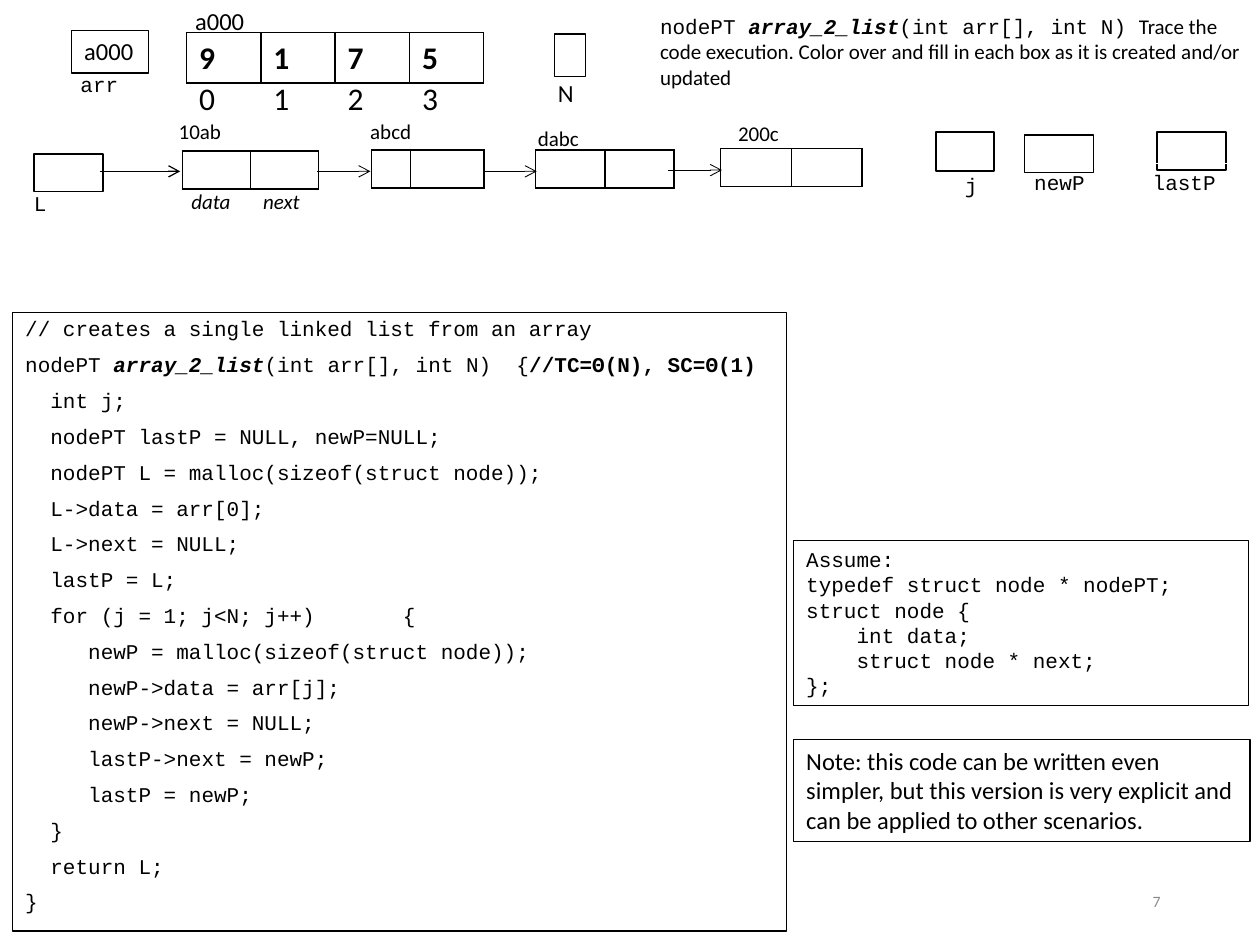
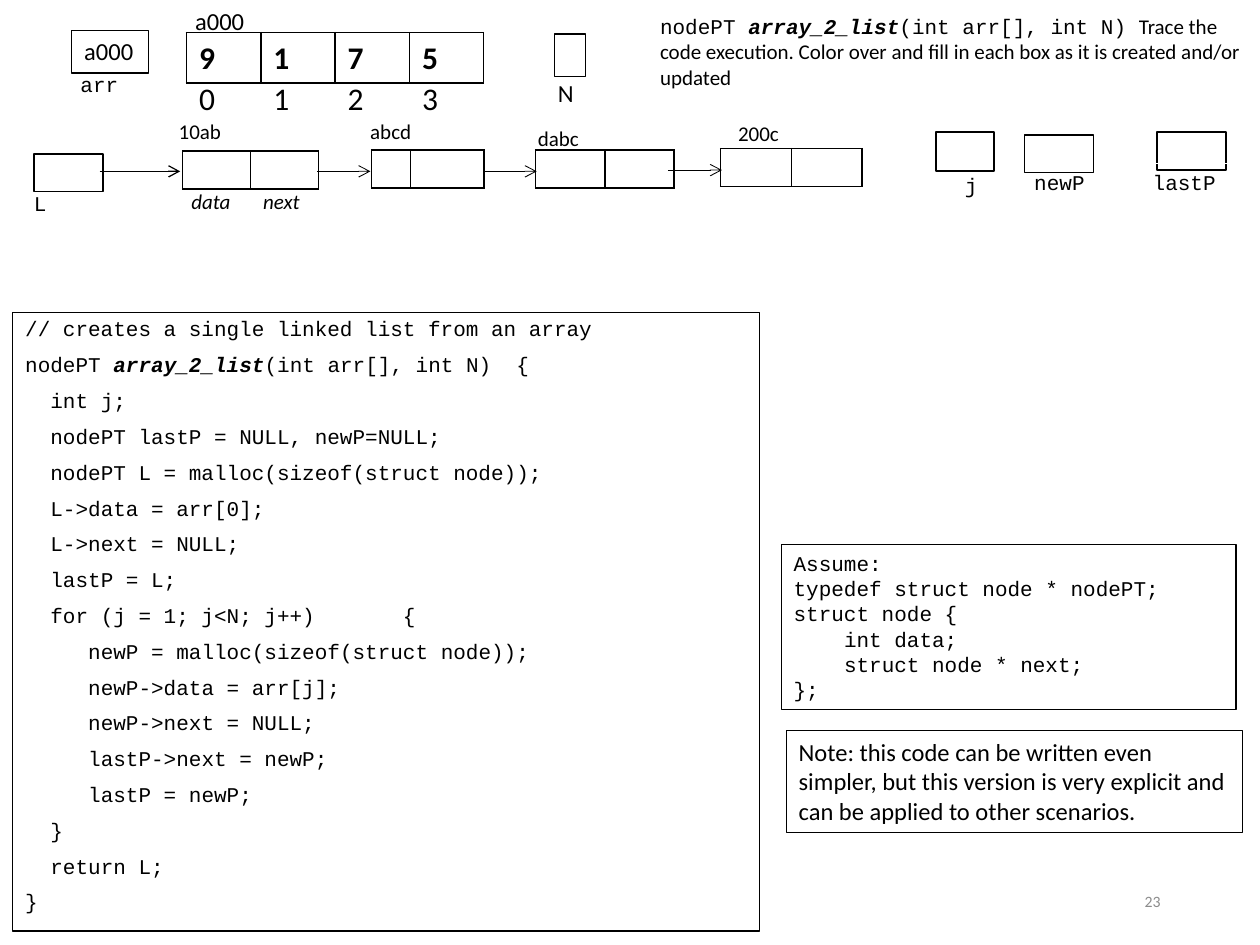
"""Build two slides that trace turning an array into a linked list."""
from lxml.etree import SubElement
from pptx import Presentation
from pptx.dml.color import RGBColor
from pptx.enum.shapes import MSO_CONNECTOR as Link, MSO_SHAPE as Shape
from pptx.enum.text import MSO_ANCHOR as Anchor, MSO_AUTO_SIZE as Fit, PP_ALIGN as Align
from pptx.oxml.ns import qn
from pptx.util import Inches, Pt

BLACK, WHITE, GRAY = "000000", "FFFFFF", "8C8C8C"
SANS, MONO = "Calibri", "Courier New"
CHAR = 0.1
NAME = ("array_2_list", "bi")
CODE = [
    (0, ["// creates a single linked list from an array"]),
    (0, ["nodePT ", NAME, "(int arr[], int N)  {"]),
    (2, ["int j;"]),
    (2, ["nodePT lastP = NULL, newP=NULL;"]),
    (2, ["nodePT L = malloc(sizeof(struct node));"]),
    (2, ["L->data = arr[0];"]),
    (2, ["L->next = NULL;"]),
    (2, ["lastP = L;"]),
    (2, ["for (j = 1; j<N; j++)", 43, "{"]),
    (5, ["newP = malloc(sizeof(struct node));"]),
    (5, ["newP->data = arr[j];"]),
    (5, ["newP->next = NULL;"]),
    (5, ["lastP->next = newP;"]),
    (5, ["lastP = newP;"]),
    (2, ["}"]),
    (2, ["return L;"]),
    (0, ["}"]),
]
STRUCT = [
    (0, ["Assume:"]),
    (0, ["typedef struct node * nodePT;"]),
    (0, ["struct node {"]),
    (4, ["int data;"]),
    (4, ["struct node * next;"]),
    (0, ["};"]),
]
TASK = ("Trace the code execution. Color over and fill in each box "
        "as it is created and/or updated")
NOTE = ("Note: this code can be written even simpler, but this version is "
        "very explicit and can be applied to other scenarios.")


def color(code):
    """Turn a hex string into a colour."""
    return RGBColor.from_string(code)


def inches(*nums):
    """Turn numbers into lengths."""
    return [Inches(num) for num in nums]


def write(frame, text, size=12, font=SANS, ink=BLACK, align=Align.LEFT,
          style="", wrap=True, anchor=Anchor.TOP, lead=None, before=0):
    """Fill a frame with a string or (indent, runs) lines; a number is a gap in points."""
    frame.word_wrap, frame.vertical_anchor = wrap, anchor
    lines = [(0, [text])] if isinstance(text, str) else text
    for num, (dent, runs) in enumerate(lines):
        para = frame.add_paragraph() if num else frame.paragraphs[0]
        para.alignment, para.line_spacing, para.space_before = align, lead, Pt(before)
        props = para._p.get_or_add_pPr()
        props.set("marL", "0")
        props.set("indent", str(Inches(dent * CHAR)))
        SubElement(props, qn("a:buNone"))
        for part in runs:
            gap = part if isinstance(part, int) else 0
            item = " " if gap else part
            words, look, *face = (item, style) if isinstance(item, str) else item
            run = para.add_run()
            run.text = words
            run.font.name, run.font.size = (face[0] if face else font), Pt(size)
            run.font.bold, run.font.italic = "b" in look, "i" in look
            run.font.color.rgb = color(ink)
            if gap:
                run._r.get_or_add_rPr().set("spc", str(gap * 100))


def label(slide, at, text, **form):
    """Add a plain text box."""
    write(slide.shapes.add_textbox(*inches(*at)).text_frame, text, **form)


def box(slide, at, text="", line=BLACK, width=0.75, fill=None, **form):
    """Add an outlined rectangle, with text if given."""
    rect = slide.shapes.add_shape(Shape.RECTANGLE, *inches(*at))
    rect.shadow.inherit = False
    rect.line.color.rgb, rect.line.width = color(line), Pt(width)
    if fill:
        rect.fill.solid()
        rect.fill.fore_color.rgb = color(fill)
    else:
        rect.fill.background()
    if text:
        write(rect.text_frame, text, **form)


def tag(slide, left, top, width, text):
    """Add a variable name in a white frame."""
    box(slide, (left, top, width, 0.3), text, line=WHITE, font=MONO)


def slot(slide, left, top, width=0.55, high=0.3):
    """Add an empty box for a variable."""
    box(slide, (left, top, width, high), width=1, fill=WHITE)


def arrow(slide, left, right, top, width=0.5):
    """Add a level arrow."""
    link = slide.shapes.add_connector(Link.STRAIGHT, *inches(left, top, right, top))
    link.line.color.rgb, link.line.width = color(BLACK), Pt(width)
    SubElement(link.line._get_or_add_ln(), qn("a:tailEnd"), type="arrow")
    SubElement(link._element.spPr, qn("a:effectLst"))


def frame_cell(cell, edge):
    """Draw or clear the four borders of a cell."""
    props = cell._tc.get_or_add_tcPr()
    for side in "LRTB":
        line = SubElement(props, qn(f"a:ln{side}"), w=str(Pt(1)))
        if edge:
            fill = SubElement(line, qn("a:solidFill"))
            SubElement(fill, qn("a:srgbClr"), val=BLACK)
        else:
            SubElement(line, qn("a:noFill"))
    cell.fill.background()


def row(slide, left, top, cols, words=None, edge=True, style=""):
    """Add a one-row table."""
    high = 0.28 if words else 0.29
    grid = slide.shapes.add_table(1, len(cols), *inches(left, top, sum(cols), high)).table
    grid.first_row = grid.horz_banding = False
    for num, width in enumerate(cols):
        grid.columns[num].width = Inches(width)
        cell = grid.cell(0, num)
        frame_cell(cell, edge)
        if words:
            write(cell.text_frame, words[num], size=18, style=style)
        else:
            para = cell.text_frame.paragraphs[0]._p
            SubElement(para, qn("a:endParaRPr"), sz="1200")


def body(slide, width, note):
    """Fill the body placeholder with the code."""
    slide.shapes.title._element.getparent().remove(slide.shapes.title._element)
    hold = slide.placeholders[1]
    hold.left, hold.top, hold.width, hold.height = inches(0.1, 2.48, width, 4.91)
    hold.line.color.rgb, hold.line.width = color(BLACK), Pt(0.75)
    hold.text_frame.auto_size = Fit.NONE
    lines = list(CODE)
    if note:
        lines[1] = (0, CODE[1][1] + [(note, "b")])
    write(hold.text_frame, lines, font=MONO, lead=0.9, before=7.5)


def nodes(slide):
    """Draw the linked list and its labels."""
    arrow(slide, 2.52, 2.94, 1.36)
    row(slide, 2.95, 1.19, [0.31, 0.58])
    row(slide, 5.72, 1.18, [0.56] * 2)
    arrow(slide, 5.3, 5.73, 1.35)
    row(slide, 4.25, 1.19, [0.55] * 2)
    arrow(slide, 3.84, 4.26, 1.36)
    tag(slide, 0.17, 1.46, 0.33, "L")
    slot(slide, 0.27, 1.22)
    arrow(slide, 0.79, 1.43, 1.36, width=0.75)
    label(slide, (1.42, 1.45, 1.15, 0.3), [(0, ["data", 16, "next"])], style="i")
    for left, top, text in [(1.32, 0.89, "10ab"), (2.84, 0.89, "abcd"),
                            (4.17, 0.95, "dabc"), (5.76, 0.91, "200c")]:
        label(slide, (left, top, 0.6, 0.3), text)
    row(slide, 1.45, 1.2, [0.54] * 2)


def names(slide):
    """Draw the boxes of the local variables."""
    tag(slide, 8.11, 1.3, 0.61, "newP")
    slot(slide, 8.13, 1.07)
    tag(slide, 7.56, 1.32, 0.33, "j")
    slot(slide, 7.43, 1.05, 0.46, 0.31)
    slot(slide, 9.18, 1.05)
    tag(slide, 9.05, 1.3, 0.72, "lastP")
    tag(slide, 0.54, 0.52, 0.51, "arr")


def inputs(slide):
    """Draw the values passed to the function."""
    label(slide, (4.33, 0.57, 0.33, 0.34), "N", size=14, wrap=False)
    box(slide, (4.4, 0.27, 0.25, 0.34))
    box(slide, (0.57, 0.24, 0.61, 0.34), "a000", size=14)
    label(slide, (1.45, 0, 0.61, 0.34), "a000", size=14)


def trace(deck, page, width, struct, hint, note=""):
    """Build one tracing slide."""
    slide = deck.slides.add_slide(deck.slide_layouts[1])
    body(slide, width, note)
    label(slide, (7.06, 6.95, 2.25, 0.4), page, size=9, ink=GRAY,
          align=Align.RIGHT, anchor=Anchor.MIDDLE)
    row(slide, 1.48, 0.26, [0.59] * 4, "9175", style="b")
    row(slide, 1.48, 0.59, [0.59] * 4, "0123", edge=False)
    nodes(slide)
    task = ["nodePT ", NAME, "(int arr[], int N) ", (TASK, "", SANS)]
    label(slide, (5.14, 0.06, 4.85, 0.71), [(0, task)], font=MONO)
    names(slide)
    box(slide, (*struct, 3.61, 1.31), STRUCT, font=MONO)
    box(slide, (*hint, 3.62, 0.81), NOTE, size=14)
    inputs(slide)


def main():
    """Build and save the deck."""
    deck = Presentation()
    deck.slide_width, deck.slide_height = inches(10, 7.5)
    trace(deck, "7", 6.14, (6.3, 4.29), (6.3, 5.87), note="//TC=Θ(N), SC=Θ(1)")
    trace(deck, "23", 5.93, (6.2, 4.32), (6.24, 5.8))
    deck.save("out.pptx")


if __name__ == "__main__":
    main()
